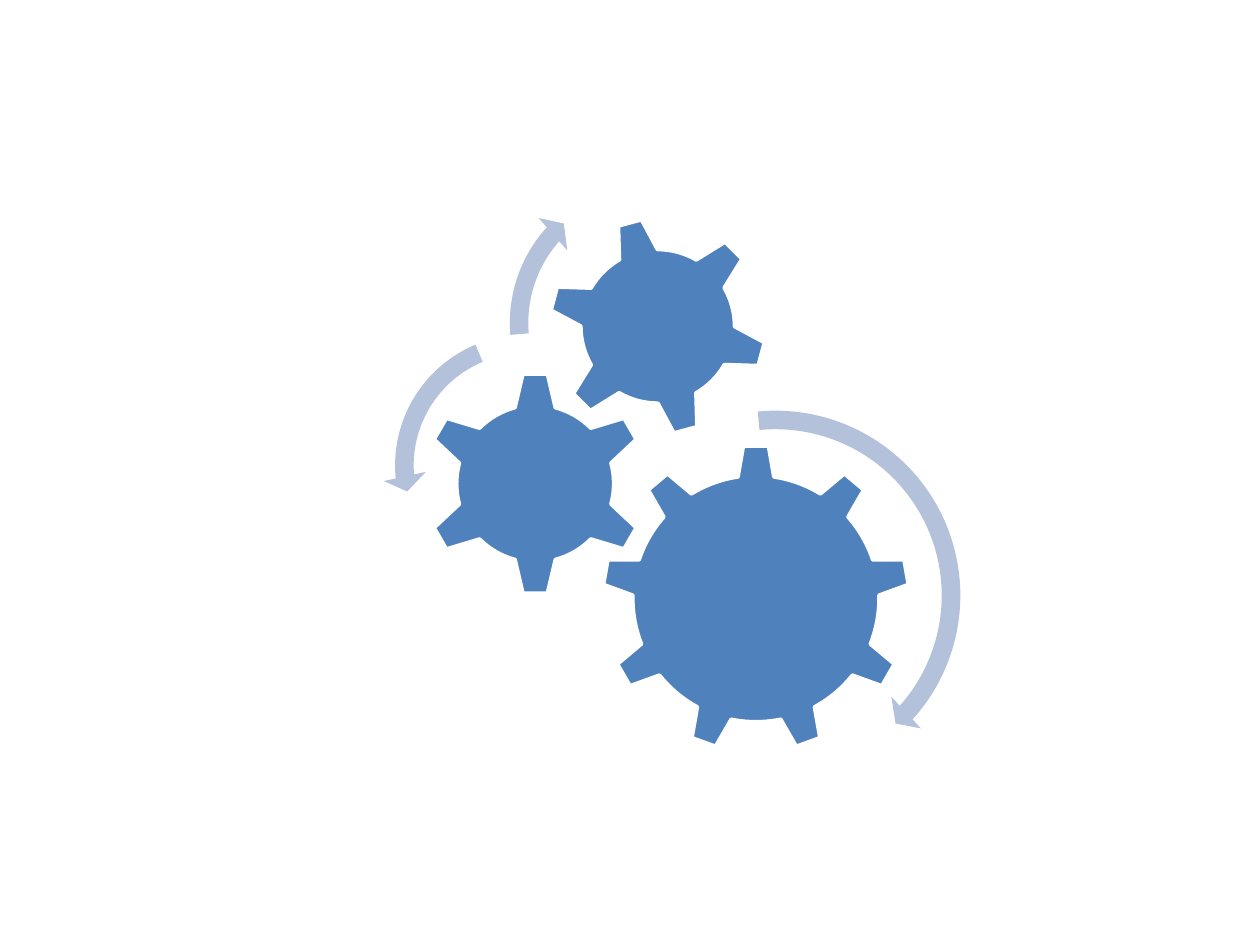
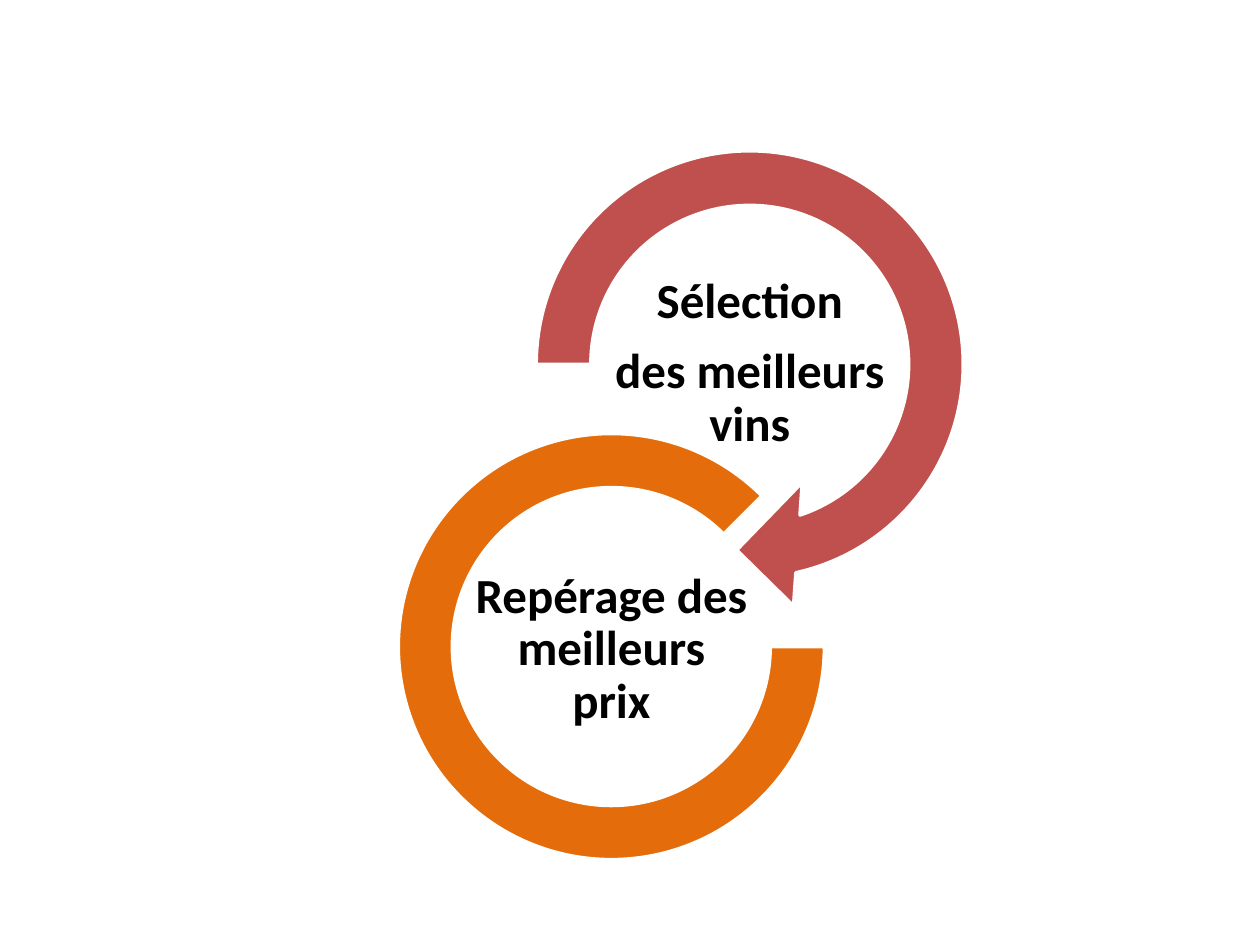
import pptx
import pptx.dml.color
import pptx.enum.shapes
import pptx.enum.text
import pptx.util

Cm, Pt = pptx.util.Cm, pptx.util.Pt
RGB = pptx.dml.color.RGBColor.from_string
SHAPE = pptx.enum.shapes.MSO_SHAPE


class Theme:
    gear = "4F81BD"
    motion = "B3C1DB"
    selection = "C0504D"
    price = "E46C0A"
    outline = "FFFFFF"
    text = "000000"
    font = "Calibri"
    text_size = 28
    outline_width = 2


# Left, top and size in cm; every outline fits a square
# Gears: kind, square, rotation
GEARS = [
    (SHAPE.GEAR_9, (12.14, 8.97, 6.2), 0),
    (SHAPE.GEAR_6, (8.53, 7.49, 4.52), 0),
    (SHAPE.GEAR_6, (11.05, 4.37, 4.42), 345),
]
# Turning arrows: kind, square, thickness, (head, end, start) in degrees, head width
TURNS = [
    (SHAPE.CIRCULAR_ARROW, (11.66, 8.03, 7.95), 0.047, (4.98, 41.88, 264.47), 0.055),
    (SHAPE.LEFT_CIRCULAR_ARROW, (7.72, 6.5, 5.77), 0.065, (7.17, 174.82, 247.3), 0.075),
    (SHAPE.CIRCULAR_ARROW, (10.03, 3.4, 6.22), 0.06, (6.57, 221.9, 175.14), 0.07),
]
# Steps: kind, square, adjustments as (thickness, angles, head width), colour, label place, label
STEPS = [
    (SHAPE.CIRCULAR_ARROW, (10.11, 2.34, 10.01), (0.11, (19.04, 75, 180), 0.125),
     Theme.selection, (12.32, 5.94), ["Sélection", "des meilleurs vins"]),
    (SHAPE.BLOCK_ARC, (8.03, 8.74, 8.59), (None, (0, 315), 0.127),
     Theme.price, (9.53, 11.71), ["Repérage des meilleurs prix"]),
]
LABEL_SIZE = (5.59, 2.79)
LABEL_INSET = 0.05


def arc_adjustments(thickness, angles, head):
    """Return adjustments in units of 100000, where a degree counts 60000."""
    first = [] if thickness is None else [thickness]
    return first + [angle * 0.6 for angle in angles] + [head]


def add_figure(group, kind, square, colour, adjustments=(), outlined=True):
    left, top, size = map(Cm, square)
    figure = group.shapes.add_shape(kind, left, top, size, size)
    for index, value in enumerate(adjustments):
        figure.adjustments[index] = value
    figure.shadow.inherit = False
    figure.fill.solid()
    figure.fill.fore_color.rgb = RGB(colour)
    if outlined:
        figure.line.color.rgb = RGB(Theme.outline)
        figure.line.width = Pt(Theme.outline_width)
    else:
        figure.line.fill.background()
    return figure


def add_label(group, place, lines):
    box = group.shapes.add_textbox(*map(Cm, place + LABEL_SIZE))
    frame = box.text_frame
    frame.word_wrap = True
    frame.vertical_anchor = pptx.enum.text.MSO_ANCHOR.MIDDLE
    frame.margin_left = frame.margin_right = Cm(LABEL_INSET)
    frame.margin_top = frame.margin_bottom = Cm(LABEL_INSET)
    frame.text = "\n".join(lines)
    for para in frame.paragraphs:
        para.alignment = pptx.enum.text.PP_ALIGN.CENTER
        para.line_spacing = 0.9
        para.space_after = Pt(0.35 * Theme.text_size)
        for span in para.runs:
            span.font.name = Theme.font
            span.font.size = Pt(Theme.text_size)
            span.font.bold = True
            span.font.color.rgb = RGB(Theme.text)


def add_diagram(deck):
    """Add a blank slide and return the group that holds its diagram."""
    page = deck.slides.add_slide(deck.slide_layouts[6])
    return page.shapes.add_group_shape()


def build_gears(deck):
    group = add_diagram(deck)
    for kind, square, rotation in GEARS:
        add_figure(group, kind, square, Theme.gear).rotation = rotation
    for kind, square, *arc in TURNS:
        add_figure(group, kind, square, Theme.motion, arc_adjustments(*arc), outlined=False)


def build_steps(deck):
    group = add_diagram(deck)
    for kind, square, arc, colour, place, lines in STEPS:
        add_figure(group, kind, square, colour, arc_adjustments(*arc))
        add_label(group, place, lines)


def main():
    deck = pptx.Presentation()
    deck.slide_width, deck.slide_height = Cm(25.4), Cm(19.05)
    build_gears(deck)
    build_steps(deck)
    deck.save("out.pptx")


if __name__ == "__main__":
    main()
